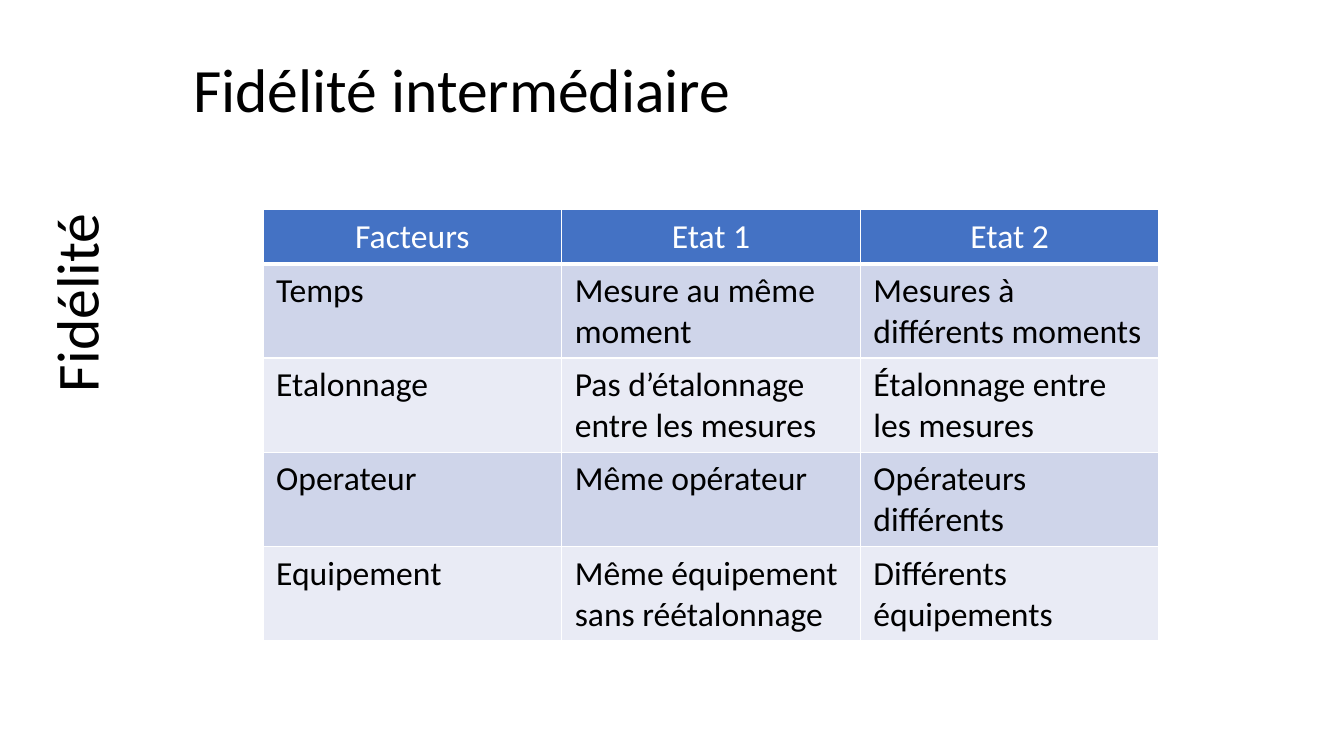
from lxml.etree import SubElement
from pptx import Presentation
from pptx.dml.color import RGBColor
from pptx.enum.text import MSO_ANCHOR as Anchor, PP_ALIGN as Align
from pptx.oxml.ns import qn
from pptx.util import Cm, Pt

COLORS = {
    "text": "000000",
    "white": "FFFFFF",
    "header": "4472C4",
    "odd": "CFD5EA",
    "even": "E9EBF5",
}
FONT = "Calibri"
INSETS = (0.33, 0.17)
FACTORS = [
    ("Facteurs", "Etat 1", "Etat 2"),
    ("Temps", "Mesure au même moment", "Mesures à différents moments"),
    ("Etalonnage", "Pas d’étalonnage entre les mesures", "Étalonnage entre les mesures"),
    ("Operateur", "Même opérateur", "Opérateurs différents"),
    ("Equipement", "Même équipement sans réétalonnage", "Différents équipements"),
]


def write_text(frame, text, size=24, color="text", align=Align.LEFT):
    paragraph = frame.paragraphs[0]
    paragraph.alignment = align
    run = paragraph.add_run()
    run.text = text
    run.font.name = FONT
    run.font.size = Pt(size)
    run.font.bold = False
    run.font.color.rgb = RGBColor.from_string(COLORS[color])


def set_insets(target, insets):
    horizontal, vertical = insets
    target.margin_left = target.margin_right = Cm(horizontal)
    target.margin_top = target.margin_bottom = Cm(vertical)


def add_heading(slide, box, text, rotation=0, insets=(0.25, 0.13), **text_format):
    shape = slide.shapes.add_textbox(*map(Cm, box))
    shape.rotation = rotation
    frame = shape.text_frame
    frame.word_wrap = True
    frame.vertical_anchor = Anchor.MIDDLE
    set_insets(frame, insets)
    write_text(frame, text, **text_format)


def set_borders(cell, bottom_width):
    properties = cell._tc.get_or_add_tcPr()
    widths = {"lnL": 1, "lnR": 1, "lnT": 1, "lnB": bottom_width}
    for side, width in widths.items():
        line = SubElement(properties, qn(f"a:{side}"), w=str(Pt(width)))
        fill = SubElement(line, qn("a:solidFill"))
        SubElement(fill, qn("a:srgbClr"), val=COLORS["white"])


def add_factor_table(slide, box, rows, header_height=1.37):
    left, top, width, height = box
    column_count = len(rows[0])
    table = slide.shapes.add_table(
        len(rows), column_count, Cm(left), Cm(top), Cm(width), Cm(height)
    ).table
    body_height = (height - header_height) / (len(rows) - 1)
    for column in table.columns:
        column.width = Cm(width / column_count)
    for row_index, texts in enumerate(rows):
        is_header = row_index == 0
        table.rows[row_index].height = Cm(header_height if is_header else body_height)
        fill = "header" if is_header else ("even", "odd")[row_index % 2]
        for column_index, text in enumerate(texts):
            cell = table.cell(row_index, column_index)
            set_insets(cell, INSETS)
            set_borders(cell, bottom_width=3 if is_header else 1)
            cell.fill.solid()
            cell.fill.fore_color.rgb = RGBColor.from_string(COLORS[fill])
            write_text(
                cell.text_frame,
                text,
                color="white" if is_header else "text",
                align=Align.CENTER if is_header else Align.LEFT,
            )


def main():
    presentation = Presentation()
    presentation.slide_width = Cm(33.87)
    presentation.slide_height = Cm(19.05)
    slide = presentation.slides.add_slide(presentation.slide_layouts[6])
    add_heading(slide, (4.62, 0.53, 24.69, 3.38), "Fidélité intermédiaire", size=44)
    add_heading(
        slide,
        (-4.11, 5.94, 11.99, 3.38),
        "Fidélité",
        rotation=270,
        insets=INSETS,
        size=42.6,
        align=Align.CENTER,
    )
    add_factor_table(slide, (6.63, 5.28, 22.58, 10.85), FACTORS)
    presentation.save("out.pptx")


if __name__ == "__main__":
    main()
